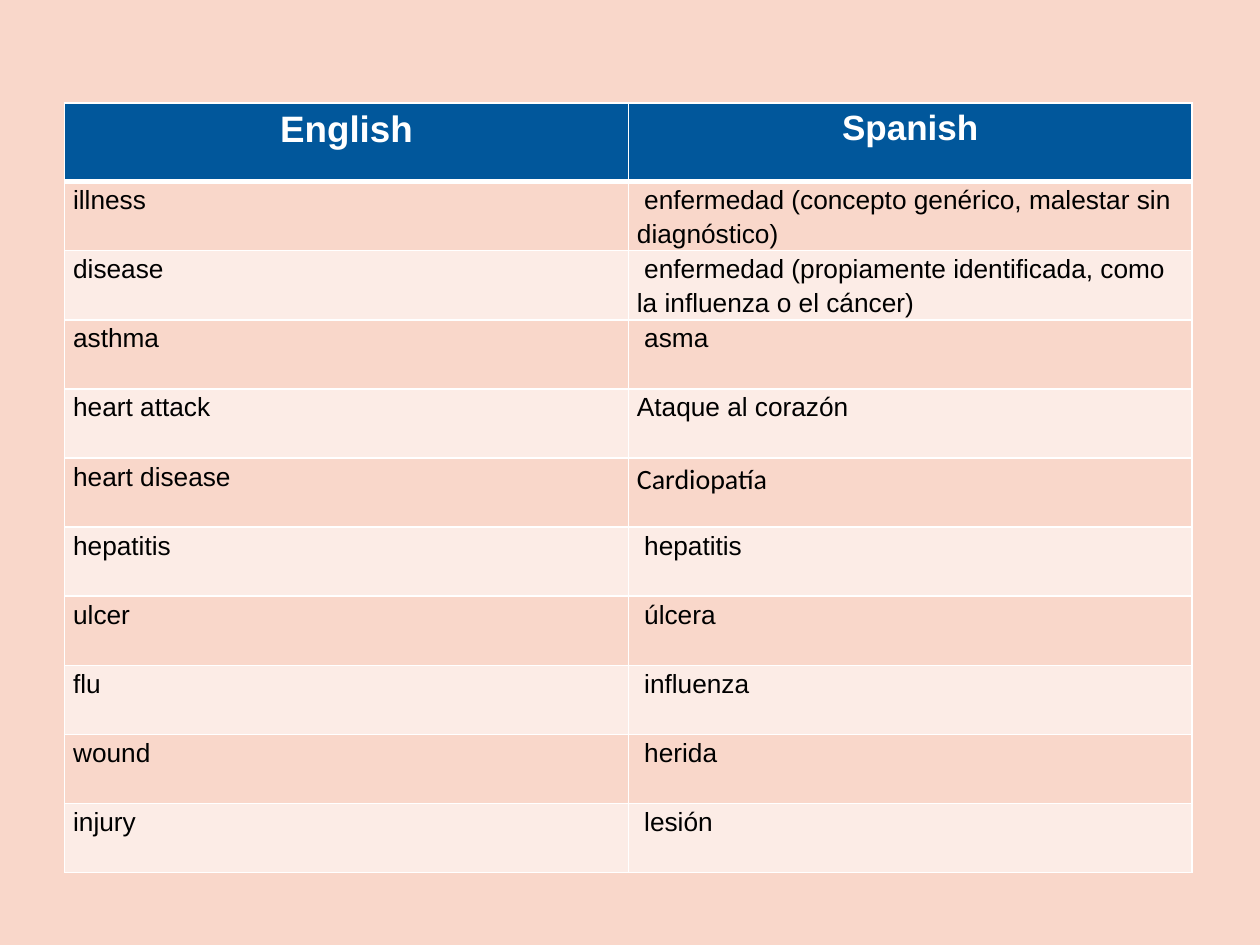
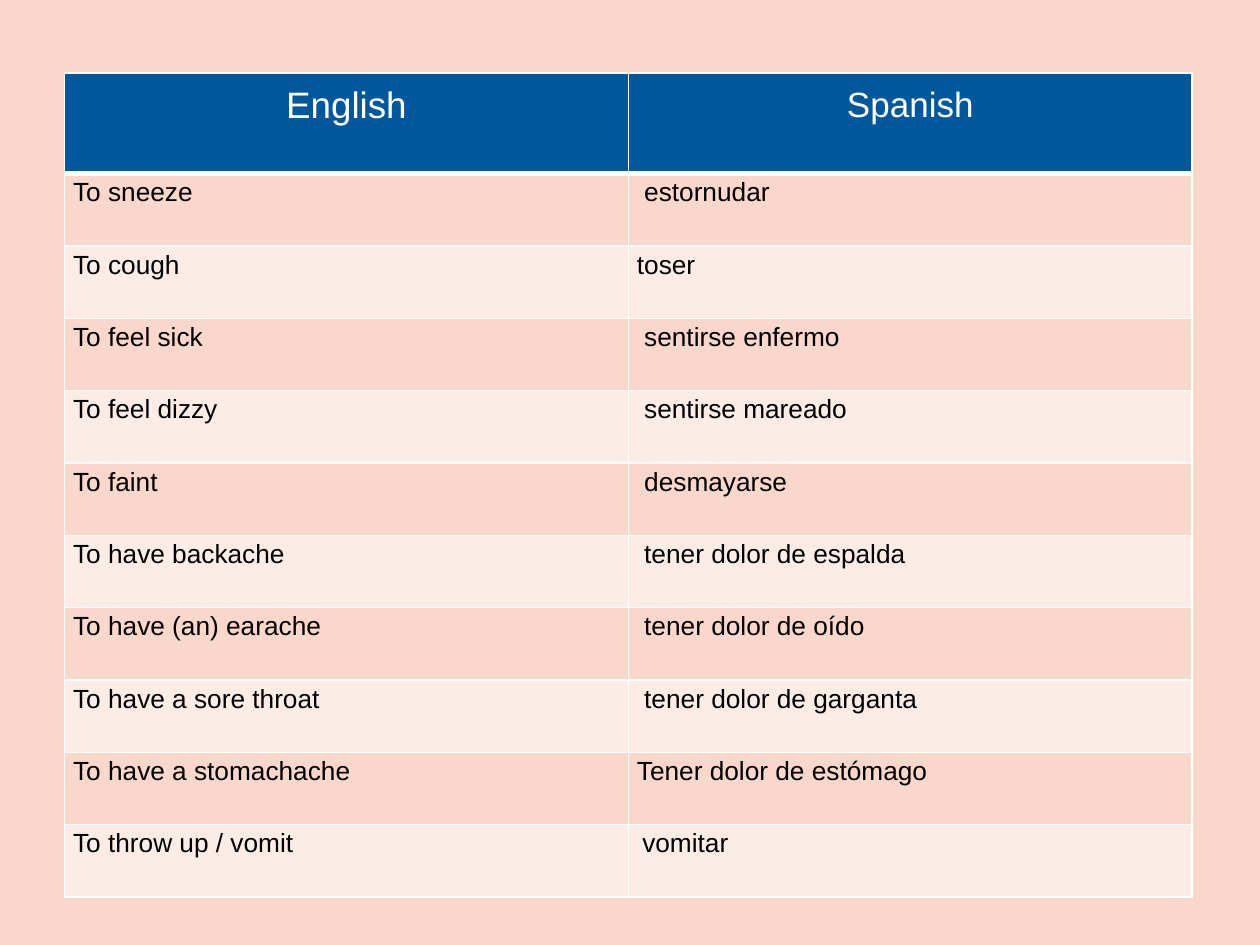
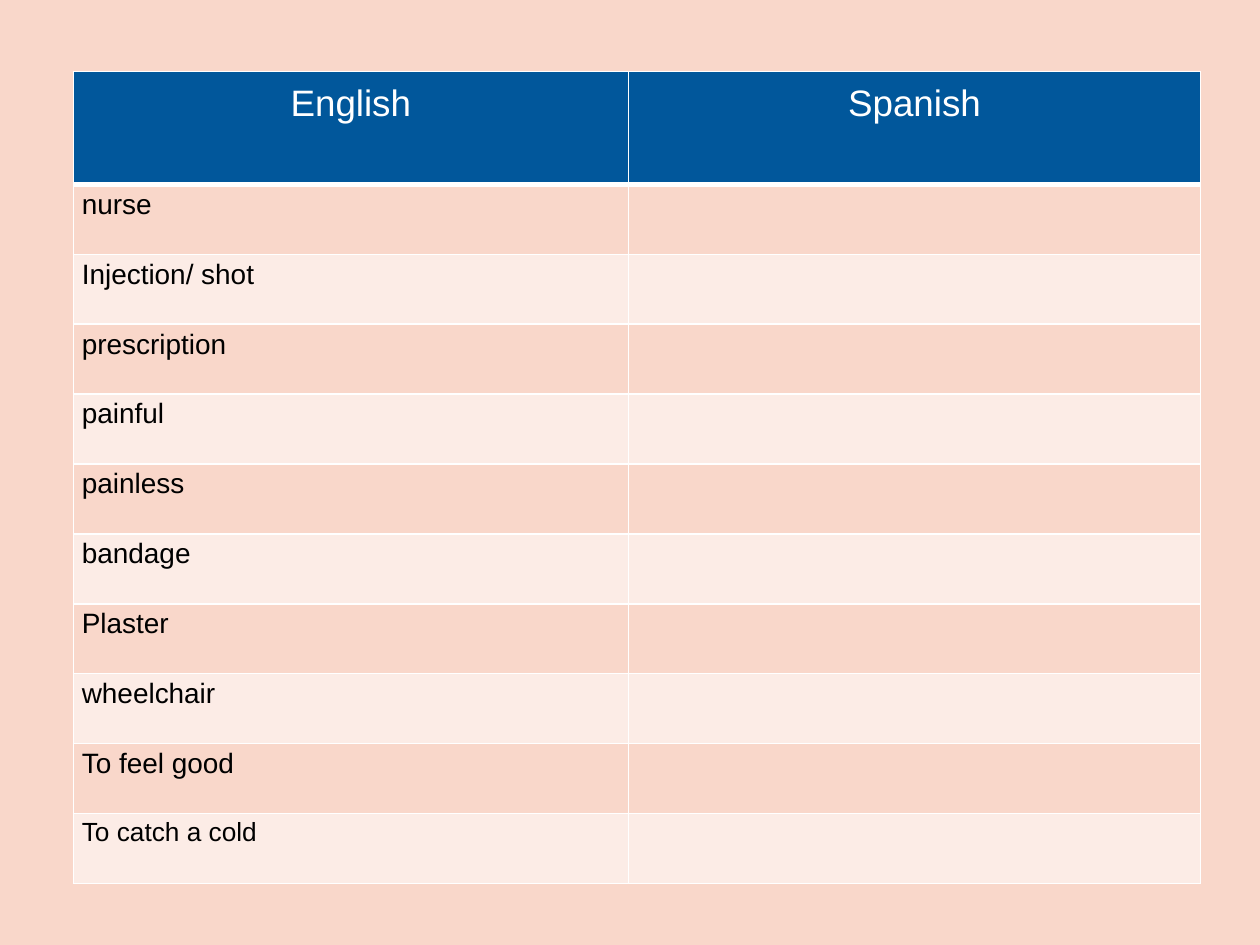
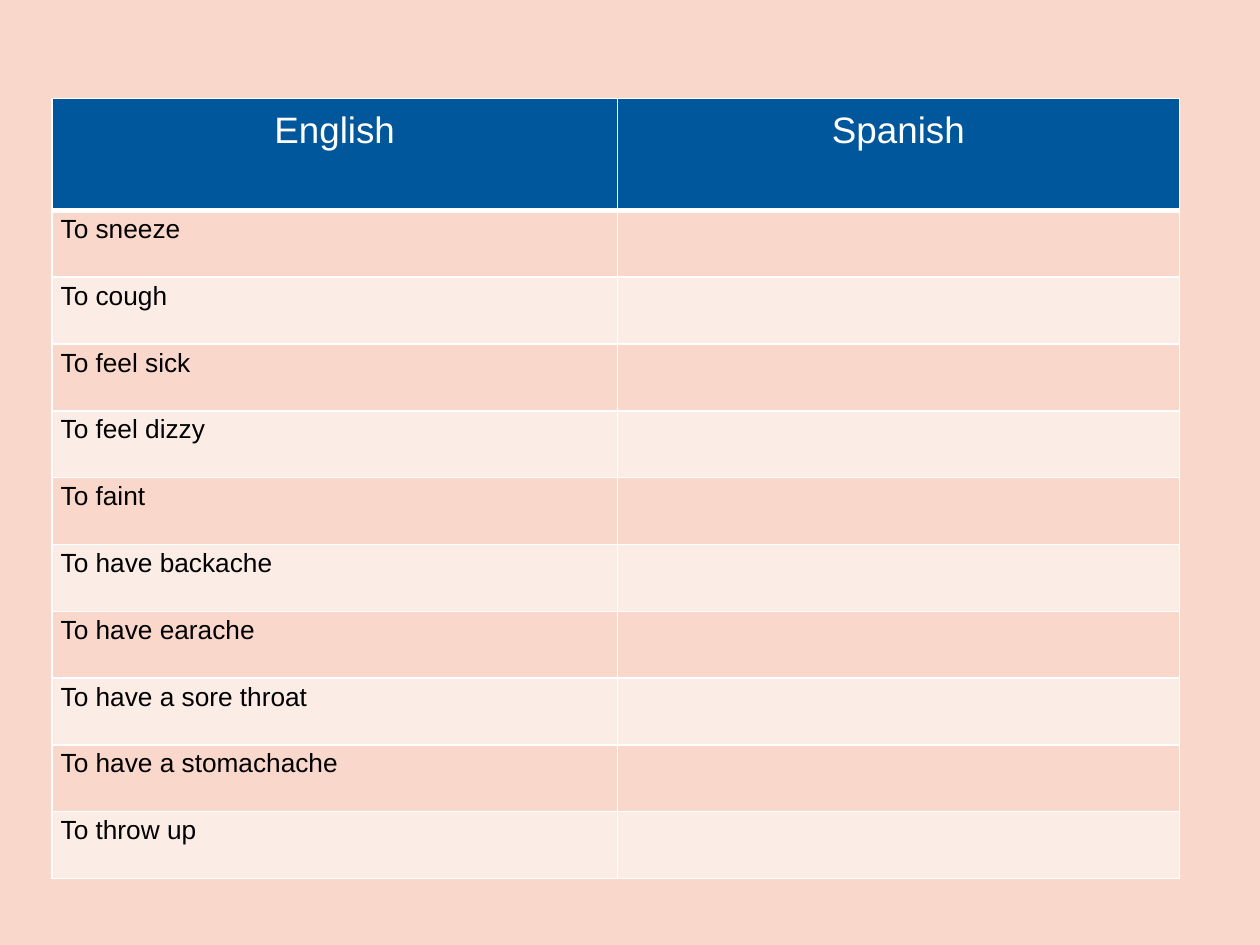
from dataclasses import dataclass

from lxml.etree import SubElement
from pptx import Presentation
from pptx.dml.color import RGBColor
from pptx.enum.text import PP_ALIGN as Align
from pptx.oxml.ns import qn
from pptx.util import Pt

PEACH = "F9D7CA"
PALE_PEACH = "FCECE6"
BLUE = "01579B"
WHITE = "FFFFFF"
BLACK = "000000"

BODY_FONT = "Arial"
LINE_SPACING = 1.15
BODY_INSETS = (4.9, 0)
ROOMY_INSETS = (7.2, 3.6)
GRID_WIDTH = 1
HEADER_RULE_WIDTH = 3


@dataclass
class Span:
    text: str
    size: float
    font: str = BODY_FONT


@dataclass
class Header:
    height: float
    sizes: tuple
    insets: tuple = ROOMY_INSETS
    bold: bool = False


@dataclass
class Vocabulary:
    """The place, measures and word pairs of one slide's table."""
    left: float
    top: float
    columns: tuple
    header: Header
    row_height: float
    words: list
    size: float = 15


ILLNESSES = [
    ("illness", " enfermedad (concepto genérico, malestar sin diagnóstico)"),
    ("disease", " enfermedad (propiamente identificada, como la influenza o el cáncer)"),
    ("asthma", " asma"),
    ("heart attack", "Ataque al corazón"),
    ("heart disease", [Span("Cardiopatía", 16, "Calibri")]),
    ("hepatitis", " hepatitis"),
    ("ulcer", " úlcera"),
    ("flu", " influenza"),
    ("wound", " herida"),
    ("injury", " lesión"),
]

SYMPTOMS = [
    ("To sneeze", " estornudar"),
    ("To cough", "toser"),
    ("To feel sick", " sentirse enfermo"),
    ("To feel dizzy", " sentirse mareado"),
    ("To faint", " desmayarse"),
    ("To have backache", " tener dolor de espalda"),
    ("To have (an) earache", " tener dolor de oído"),
    ("To have a sore throat", " tener dolor de garganta"),
    ("To have a stomachache", "Tener dolor de estómago"),
    ("To throw up / vomit", [Span(" ", 11), Span("vomitar", 15)]),
]

CARE = [(word, "") for word in (
    "nurse", "Injection/ shot", "prescription", "painful", "painless",
    "bandage", "Plaster", "wheelchair", "To feel good",
)] + [([Span("To catch a cold", 15)], "")]

SYMPTOM_EXERCISE = [(word, "") for word in (
    "To sneeze", "To cough", "To feel sick", "To feel dizzy", "To faint",
    "To have backache", "To have earache", "To have a sore throat",
    "To have a stomachache", "To throw up",
)]

VOCABULARIES = [
    Vocabulary(36.9, 58.8, (322.2, 322.2),
               Header(45, (21, 20), BODY_INSETS, bold=True), 39.5, ILLNESSES),
    Vocabulary(36.9, 41.8, (322.2, 322.2),
               Header(57.5, (21, 20)), 41.35, SYMPTOMS),
    Vocabulary(41.9, 40.8, (317.2, 327),
               Header(64.6, (21, 21)), 39.95, CARE, size=16),
    Vocabulary(29.8, 56.2, (323, 321.2),
               Header(64, (21, 21)), 38.2, SYMPTOM_EXERCISE),
]


def color(hex_value):
    return RGBColor.from_string(hex_value)


def add_borders(cell, bottom_width):
    """Draw white lines on all four sides; they must precede the fill."""
    properties = cell._tc.get_or_add_tcPr()
    widths = {"a:lnL": GRID_WIDTH, "a:lnR": GRID_WIDTH,
              "a:lnT": GRID_WIDTH, "a:lnB": bottom_width}
    for position, (tag, width) in enumerate(widths.items()):
        line = SubElement(properties, qn(tag), w=str(Pt(width)))
        fill = SubElement(line, qn("a:solidFill"))
        SubElement(fill, qn("a:srgbClr"), val=WHITE)
        properties.insert(position, line)


def style_cell(cell, fill, insets, bottom_width=GRID_WIDTH):
    cell.margin_left = cell.margin_right = Pt(insets[0])
    cell.margin_top = cell.margin_bottom = Pt(insets[1])
    cell.fill.solid()
    cell.fill.fore_color.rgb = color(fill)
    add_borders(cell, bottom_width)


def write_cell(cell, content, size, text_color, bold=False, align=Align.LEFT):
    """Write a plain string at the given size, or spans at their own."""
    spans = [Span(content, size)] if isinstance(content, str) else content
    para = cell.text_frame.paragraphs[0]
    para.alignment = align
    para.line_spacing = LINE_SPACING
    for span in spans:
        if not span.text:
            continue
        run = para.add_run()
        run.text = span.text
        run.font.name = span.font
        run.font.size = Pt(span.size)
        run.font.bold = bold
        run.font.color.rgb = color(text_color)


def add_header(table, header):
    table.rows[0].height = Pt(header.height)
    for cell, language, size in zip(table.rows[0].cells,
                                    ("English", "Spanish"), header.sizes):
        style_cell(cell, BLUE, header.insets, HEADER_RULE_WIDTH)
        write_cell(cell, language, size, WHITE, header.bold, Align.CENTER)


def add_words(table, vocabulary):
    for number, pair in enumerate(vocabulary.words, start=1):
        row = table.rows[number]
        row.height = Pt(vocabulary.row_height)
        fill = PEACH if number % 2 else PALE_PEACH
        for cell, word in zip(row.cells, pair):
            style_cell(cell, fill, BODY_INSETS)
            write_cell(cell, word, vocabulary.size, BLACK)


def add_vocabulary_table(page, vocabulary):
    row_count = len(vocabulary.words) + 1
    height = vocabulary.header.height + vocabulary.row_height * len(vocabulary.words)
    table = page.shapes.add_table(
        row_count, 2, Pt(vocabulary.left), Pt(vocabulary.top),
        Pt(sum(vocabulary.columns)), Pt(height)).table
    table.horz_banding = False
    for column, width in zip(table.columns, vocabulary.columns):
        column.width = Pt(width)
    add_header(table, vocabulary.header)
    add_words(table, vocabulary)


def add_page(deck):
    page = deck.slides.add_slide(deck.slide_layouts[6])
    page.background.fill.solid()
    page.background.fill.fore_color.rgb = color(PEACH)
    return page


def main():
    deck = Presentation()
    deck.slide_width, deck.slide_height = Pt(720), Pt(540)
    for vocabulary in VOCABULARIES:
        add_vocabulary_table(add_page(deck), vocabulary)
    deck.save("out.pptx")


if __name__ == "__main__":
    main()
